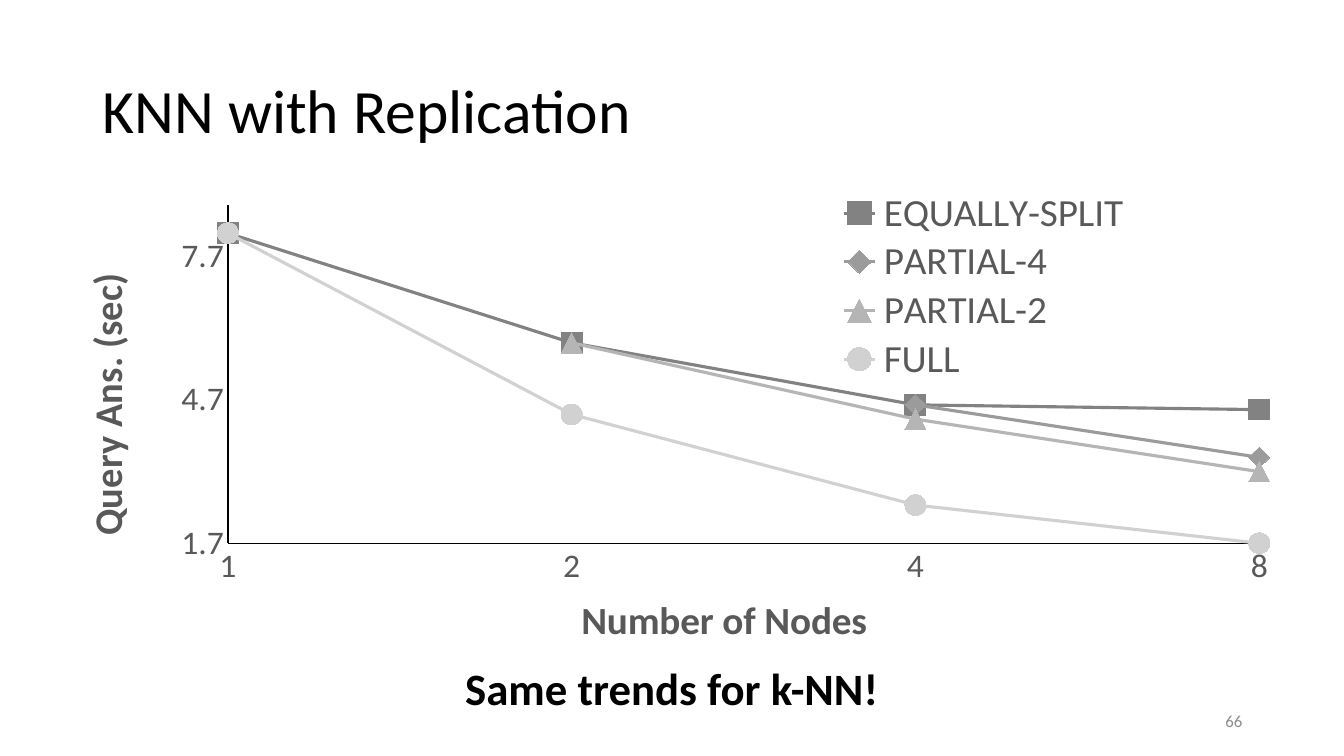
from lxml.etree import SubElement
from pptx import Presentation
from pptx.chart.data import CategoryChartData as ChartData
from pptx.dml.color import RGBColor
from pptx.enum.chart import XL_CHART_TYPE as Kind, XL_LEGEND_POSITION as Side
from pptx.enum.chart import XL_MARKER_STYLE as Mark, XL_TICK_MARK as Tick
from pptx.enum.text import MSO_ANCHOR as Anchor, MSO_AUTO_SIZE as Fit, PP_ALIGN as Align
from pptx.oxml.ns import qn
from pptx.util import Inches, Pt

BLACK = RGBColor(0x00, 0x00, 0x00)
GREY = RGBColor(0x59, 0x59, 0x59)
PALE = RGBColor(0x8C, 0x8C, 0x8C)

NODES = ["1", "2", "4", "8"]
SERIES = [
    ("EQUALLY-SPLIT", (8.2, 5.9, 4.6, 4.5), RGBColor(0x82, 0x82, 0x82), Mark.SQUARE),
    ("PARTIAL-4", (None, None, 4.6, 3.5), RGBColor(0x9B, 0x9B, 0x9B), Mark.DIAMOND),
    ("PARTIAL-2", (None, 5.9, 4.3, 3.2), RGBColor(0xB5, 0xB5, 0xB5), Mark.TRIANGLE),
    ("FULL", (8.2, 4.4, 2.5, 1.7), RGBColor(0xD1, 0xD1, 0xD1), Mark.CIRCLE),
]


class Deck:
    """Holds the style and the current slide."""

    face = "Calibri"

    def __init__(self):
        self.prs = Presentation()
        self.prs.slide_width, self.prs.slide_height = Inches(13.33), Inches(7.5)
        self.slide = self.prs.slides.add_slide(self.prs.slide_layouts[5])

    def font(self, font, size, color, bold=False):
        font.name, font.size, font.bold = self.face, Pt(size), bold
        font.color.rgb = color

    def fill(self, shape, text, size, color, align, anchor, bold=False):
        frame = shape.text_frame
        frame.text = text
        frame.word_wrap, frame.auto_size = True, Fit.NONE
        frame.vertical_anchor = anchor
        par = frame.paragraphs[0]
        par.alignment = align
        self.font(par.runs[0].font, size, color, bold)
        return par

    def title(self, text, box):
        shape = self.slide.shapes.title
        shape.left, shape.top, shape.width, shape.height = map(Inches, box)
        par = self.fill(shape, text, 44, BLACK, Align.LEFT, Anchor.MIDDLE)
        par.line_spacing = 0.9

    def text(self, text, box, size, color, align, anchor, bold=False):
        shape = self.slide.shapes.add_textbox(*map(Inches, box))
        self.fill(shape, text, size, color, align, anchor, bold)

    def place(self, node, spots, inner=False):
        """Give a chart part a manual layout, in shares of the chart."""
        for old in node.findall(qn("c:layout")):
            node.remove(old)
        lay = SubElement(node, qn("c:layout"))
        over = node.find(qn("c:overlay"))
        if over is None:
            node.insert(0, lay)
        else:
            over.addprevious(lay)
        man = SubElement(lay, qn("c:manualLayout"))
        if inner:
            SubElement(man, qn("c:layoutTarget")).set("val", "inner")
        for key in "xy":
            SubElement(man, qn(f"c:{key}Mode")).set("val", "edge")
        for key, spot in zip("xywh", spots):
            SubElement(man, qn(f"c:{key}")).set("val", f"{spot:.4f}")

    def axis(self, axis, text, spot, turn=0):
        axis.has_major_gridlines = False
        axis.major_tick_mark = axis.minor_tick_mark = Tick.NONE
        axis.format.line.color.rgb = BLACK
        axis.format.line.width = Pt(1)
        self.font(axis.tick_labels.font, 24, GREY)
        frame = axis.axis_title.text_frame
        frame.text = text
        self.font(frame.paragraphs[0].runs[0].font, 28, GREY, True)
        head = axis.axis_title._element
        head.find(".//" + qn("a:bodyPr")).set("rot", str(turn * 60000))
        self.place(head, spot)

    def chart(self, box):
        data = ChartData(number_format="0.0")
        data.categories = NODES
        for name, vals, _, _ in SERIES:
            data.add_series(name, vals)
        chart = self.slide.shapes.add_chart(
            Kind.LINE_MARKERS, *map(Inches, box), data).chart
        chart.has_title = False
        self.font(chart.font, 10, BLACK)
        plot = chart.plots[0]
        plot.vary_by_categories = False

        # Axes
        self.axis(chart.category_axis, "Number of Nodes", (0.42, 0.88))
        rise = chart.value_axis
        self.axis(rise, "Query Ans. (sec)", (0.01, 0.24), -90)
        rise.minimum_scale, rise.maximum_scale, rise.major_unit = 1.7, 8.8, 3
        rise.tick_labels.number_format = "0.0"
        rise.tick_labels.number_format_is_linked = False
        node = rise._element
        for old in node.findall(qn("c:crossBetween")):
            node.remove(old)
        cross = SubElement(node, qn("c:crossBetween"))
        cross.set("val", "midCat")
        node.find(qn("c:crosses")).addnext(cross)

        # Plot area, from its edges in inches on the slide
        left, top, wide, high = box
        area = chart._chartSpace.find(".//" + qn("c:plotArea"))
        self.place(area, ((2.26 - left) / wide, (2.04 - top) / high,
                          10.23 / wide, 3.43 / high), True)

        # Series
        for line, (_, _, color, mark) in zip(plot.series, SERIES):
            line.smooth = False
            line.format.line.color.rgb = color
            line.format.line.width = Pt(2.25)
            line.marker.style, line.marker.size = mark, 15
            line.marker.format.fill.solid()
            line.marker.format.fill.fore_color.rgb = color
            line.marker.format.line.color.rgb = color

        # Legend
        chart.has_legend = True
        chart.legend.position = Side.BOTTOM
        chart.legend.include_in_layout = False
        self.font(chart.legend.font, 28, GREY)
        self.place(chart.legend._element, (0.63, 0.07, 0.25, 0.4))


def main():
    deck = Deck()
    deck.title("KNN with Replication", (0.92, 0.4, 11.5, 1.45))
    deck.text("66", (9.42, 6.95, 3, 0.4), 12, PALE, Align.RIGHT, Anchor.MIDDLE)
    deck.chart((0.61, 1.52, 12.11, 4.99))
    deck.text("Same trends for k-NN!", (0, 6.51, 13.33, 0.64), 32, BLACK,
              Align.CENTER, Anchor.TOP, True)
    deck.prs.save("out.pptx")


if __name__ == "__main__":
    main()
